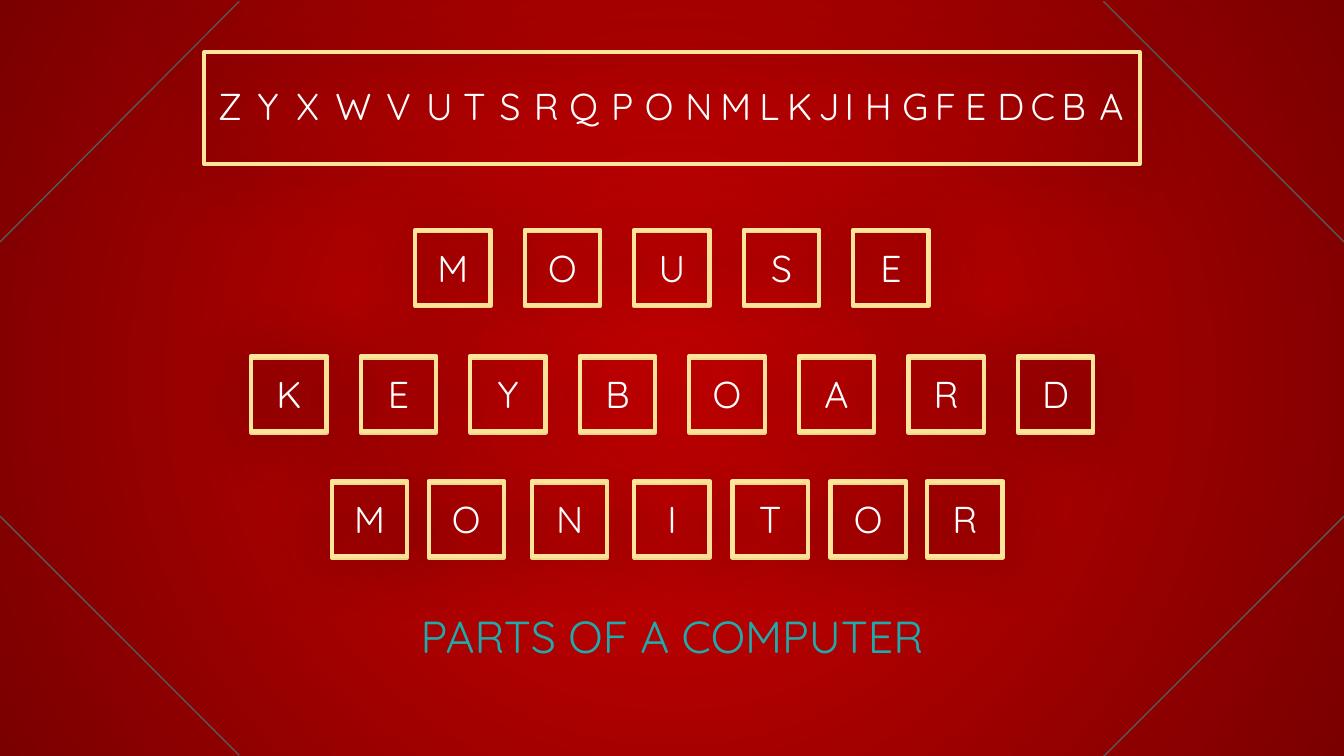
import pptx
import pptx.dml.color
import pptx.enum.shapes
import pptx.enum.text
import pptx.oxml
import pptx.oxml.ns
import pptx.util
from pptx.util import Inches

RGBColor = pptx.dml.color.RGBColor
BRIGHT_RED = RGBColor(0xD2, 0x00, 0x00)
DARK_RED = RGBColor(0x7A, 0x00, 0x00)
CREAM = RGBColor(0xFF, 0xE5, 0x99)
TEAL = RGBColor(0x1F, 0xAA, 0xAD)
WHITE = RGBColor(0xFF, 0xFF, 0xFF)
GRAY = RGBColor(0x58, 0x58, 0x58)

FONT = "Quicksand"
SQUARE = 0.56
PITCH = 0.815

# Letter, left edge and width in inches
ALPHABET = [
    ("Z", 1.62, 0.18), ("Y", 1.9, 0.19), ("X", 2.2, 0.18), ("W", 2.47, 0.32),
    ("V", 2.86, 0.21), ("U", 3.16, 0.22), ("T", 3.44, 0.18), ("S", 3.7, 0.19),
    ("R", 3.96, 0.21), ("Q", 4.23, 0.23), ("P", 4.53, 0.2), ("O", 4.79, 0.23),
    ("N", 5.09, 0.22), ("M", 5.35, 0.25), ("L", 5.64, 0.17), ("K", 5.85, 0.2),
    ("J", 6.09, 0.14), ("I", 6.25, 0.14), ("H", 6.42, 0.23), ("G", 6.7, 0.22),
    ("F", 6.95, 0.17), ("E", 7.17, 0.18), ("D", 7.41, 0.22), ("C", 7.66, 0.2),
    ("B", 7.89, 0.2), ("A", 8.16, 0.22),
]

# Word, top of its letter squares and their left edges in inches
WORDS = [
    ("MOUSE", 1.71, [3.09 + PITCH * i for i in range(5)]),
    ("KEYBOARD", 2.65, [1.87 + PITCH * i for i in range(8)]),
    ("MONITOR", 3.58, [2.47, 3.19, 3.96, 4.72, 5.45, 6.18, 6.9]),
]

CORNER_LINES = [
    (0, 1.8, 1.78, 0.01),
    (8.21, 5.63, 10, 3.84),
    (0, 3.84, 1.78, 5.62),
    (10, 1.8, 8.21, 0.01),
]


def set_background(slide):
    """Fill the slide with a gradient that darkens from the centre outwards."""
    fill = slide.background.fill
    fill.gradient()
    for stop, color, position in zip(fill.gradient_stops, (BRIGHT_RED, DARK_RED), (0, 1)):
        stop.color.rgb = color
        stop.position = position
    gradient = slide.element.find(".//" + pptx.oxml.ns.qn("a:gradFill"))
    gradient.remove(gradient.find(pptx.oxml.ns.qn("a:lin")))
    gradient.append(pptx.oxml.parse_xml(
        f'<a:path {pptx.oxml.ns.nsdecls("a")} path="circle">'
        '<a:fillToRect l="50000" t="50000" r="50000" b="50000"/></a:path>'))


def add_shadow(shape, opacity, blur, distance):
    """Give the shape a soft black shadow below it; lengths are in points."""
    shape.element.spPr.append(pptx.oxml.parse_xml(
        f'<a:effectLst {pptx.oxml.ns.nsdecls("a")}>'
        f'<a:outerShdw blurRad="{pptx.util.Pt(blur)}" dist="{pptx.util.Pt(distance)}"'
        ' dir="5400000" algn="bl" rotWithShape="0">'
        f'<a:srgbClr val="000000"><a:alpha val="{opacity * 1000}"/></a:srgbClr>'
        '</a:outerShdw></a:effectLst>'))


def add_corner_line(slide, x1, y1, x2, y2):
    line = slide.shapes.add_connector(
        pptx.enum.shapes.MSO_CONNECTOR.STRAIGHT,
        Inches(x1), Inches(y1), Inches(x2), Inches(y2))
    line.line.color.rgb = GRAY
    line.line.width = pptx.util.Pt(0.75)
    add_shadow(line, 6, 10, 2.2)


def write(shape, text, size, color, margin=0):
    frame = shape.text_frame
    frame.text = text
    frame.margin_left = frame.margin_right = Inches(margin)
    frame.margin_top = frame.margin_bottom = Inches(margin)
    paragraph = frame.paragraphs[0]
    paragraph.alignment = pptx.enum.text.PP_ALIGN.CENTER
    font = paragraph.runs[0].font
    font.name = FONT
    font.size = pptx.util.Pt(size)
    font.color.rgb = color


def add_frame(slide, left, top, width, height):
    frame = slide.shapes.add_shape(
        pptx.enum.shapes.MSO_SHAPE.RECTANGLE,
        Inches(left), Inches(top), Inches(width), Inches(height))
    frame.fill.background()
    frame.line.color.rgb = CREAM
    frame.line.width = pptx.util.Pt(2.25)
    add_shadow(frame, 50, 32, 1.5)
    return frame


def add_loose_letter(slide, letter, left, width):
    box = slide.shapes.add_textbox(Inches(left), Inches(0.62), Inches(width), Inches(0.38))
    write(box, letter, 20, WHITE)
    box.text_frame.word_wrap = False
    box.text_frame.auto_size = pptx.enum.text.MSO_AUTO_SIZE.SHAPE_TO_FIT_TEXT


def add_word(slide, word, top, lefts):
    """Draw a row of empty squares with lettered squares just above them."""
    for left in lefts:
        add_frame(slide, left, top + 0.01, SQUARE, SQUARE)
    for letter, left in zip(word, lefts):
        square = add_frame(slide, left, top, SQUARE, SQUARE)
        write(square, letter, 20, WHITE)
        square.text_frame.vertical_anchor = pptx.enum.text.MSO_ANCHOR.MIDDLE


def add_title(slide, text):
    title = slide.shapes.title
    title.left, title.top = Inches(1.52), Inches(4.41)
    title.width, title.height = Inches(6.96), Inches(0.64)
    write(title, text, 24, TEAL, margin=0.1)
    title.text_frame.vertical_anchor = pptx.enum.text.MSO_ANCHOR.MIDDLE
    title.text_frame.auto_size = pptx.enum.text.MSO_AUTO_SIZE.SHAPE_TO_FIT_TEXT


def main():
    presentation = pptx.Presentation()
    presentation.slide_width = Inches(10)
    presentation.slide_height = Inches(10 * 9 / 16)
    slide = presentation.slides.add_slide(presentation.slide_layouts[5])
    set_background(slide)
    for ends in CORNER_LINES:
        add_corner_line(slide, *ends)
    add_frame(slide, 1.52, 0.39, 6.96, 0.83)
    add_title(slide, "PARTS OF A COMPUTER")
    for letter, left, width in ALPHABET:
        add_loose_letter(slide, letter, left, width)
    for word, top, lefts in WORDS:
        add_word(slide, word, top, lefts)
    presentation.save("out.pptx")


if __name__ == "__main__":
    main()
